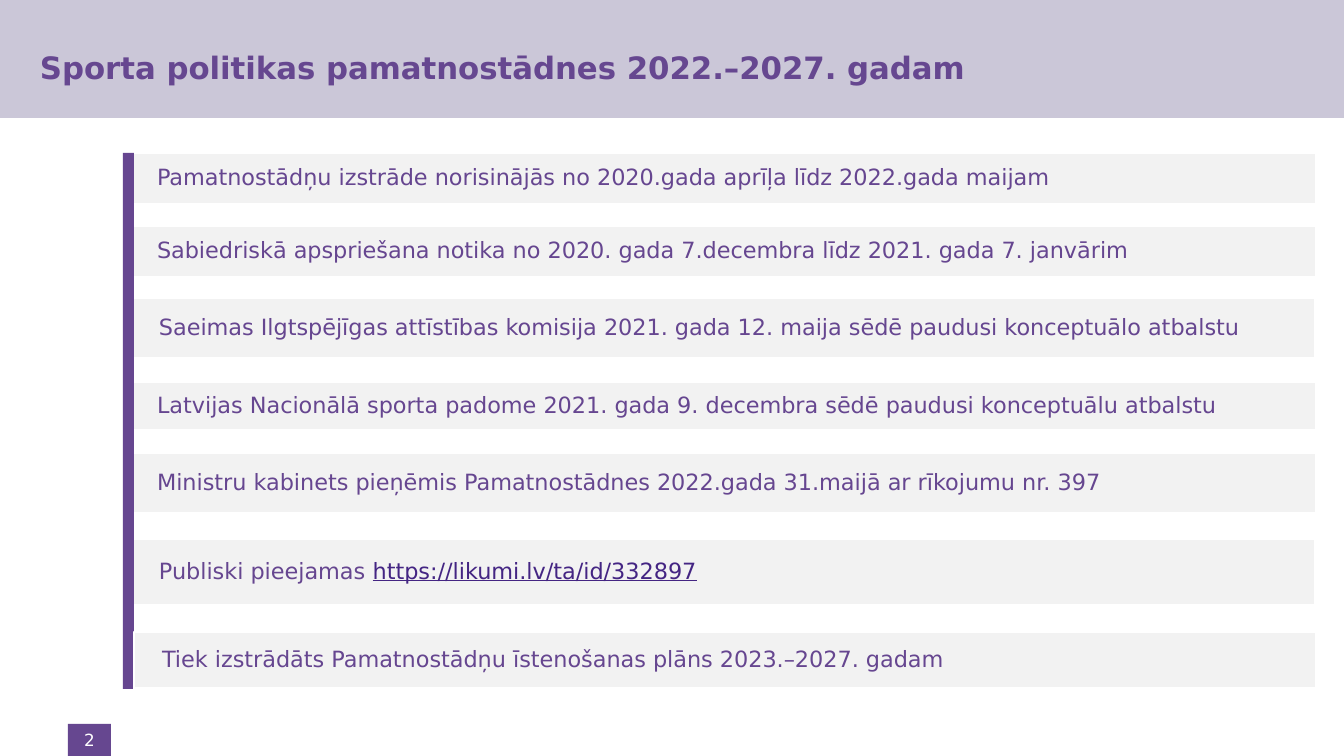
from pptx import Presentation
from pptx.dml.color import RGBColor
from pptx.enum.shapes import MSO_SHAPE
from pptx.enum.text import MSO_ANCHOR, PP_ALIGN
from pptx.util import Pt

# Content
TITLE = "Sporta politikas pamatnostādnes 2022.–2027. gadam"
PAGE = "2"
ADDRESS = "https://likumi.lv/ta/id/332897"
# left, top, height in px, then the text runs
MILESTONES = [
    (129, 153, 51, ["Pamatnostādņu izstrāde norisinājās no 2020.gada aprīļa līdz 2022.gada maijam"]),
    (129, 226, 51, ["Sabiedriskā apspriešana notika no 2020. gada 7.decembra līdz 2021. gada 7. janvārim"]),
    (131, 298, 60, ["Saeimas Ilgtspējīgas attīstības komisija 2021. gada 12. maija sēdē paudusi konceptuālo atbalstu"]),
    (129, 382, 48, ["Latvijas Nacionālā sporta padome 2021. gada 9. decembra sēdē paudusi konceptuālu atbalstu"]),
    (129, 453, 60, ["Ministru kabinets pieņēmis Pamatnostādnes 2022.gada 31.maijā ar rīkojumu nr. 397"]),
    (131, 539, 66, ["Publiski pieejamas ", ADDRESS]),
    (134, 632, 57, ["Tiek izstrādāts Pamatnostādņu īstenošanas plāns 2023.–2027. gadam"]),
]

FONT = "DejaVu Sans"
WIDTH, HEIGHT = 1344, 756
BARS_RIGHT = 1316
EMU_PER_PX = 12192000 / WIDTH
PURPLE, TEXT_PURPLE, LINK = "664790", "664690", "442583"
LILAC, GREY, WHITE = "CBC7D8", "F2F2F2", "FFFFFF"


def px(length):
    return round(length * EMU_PER_PX)


def color(hex_string):
    return RGBColor.from_string(hex_string)


def add_rect(left, top, width, height, fill, line=None):
    rect = slide.shapes.add_shape(
        MSO_SHAPE.RECTANGLE, px(left), px(top), px(width), px(height))
    rect.shadow.inherit = False
    rect.fill.solid()
    rect.fill.fore_color.rgb = color(fill)
    if line:
        rect.line.color.rgb = color(line)
        rect.line.width = Pt(2)
    else:
        rect.line.fill.background()
    return rect


def set_text(shape, runs, size, hue, insets, align=PP_ALIGN.LEFT, bold=False):
    frame = shape.text_frame
    frame.word_wrap = True
    frame.vertical_anchor = MSO_ANCHOR.MIDDLE
    (frame.margin_left, frame.margin_top,
     frame.margin_right, frame.margin_bottom) = map(px, insets)
    paragraph = frame.paragraphs[0]
    paragraph.alignment = align
    for words in runs:
        run = paragraph.add_run()
        run.text = words
        run.font.name = FONT
        run.font.size = Pt(size)
        run.font.bold = bold
        run.font.underline = words == ADDRESS
        run.font.color.rgb = color(LINK if words == ADDRESS else hue)
    return paragraph


presentation = Presentation()
presentation.slide_width, presentation.slide_height = px(WIDTH), px(HEIGHT)
slide = presentation.slides.add_slide(presentation.slide_layouts[6])

# Header band and title
add_rect(0, 0, WIDTH, 118, LILAC)
title = slide.shapes.add_textbox(px(40), px(4), px(1225), px(126))
set_text(title, [TITLE], 22, PURPLE, (0, 5, 10, 5), bold=True)

# Page number
badge = add_rect(68, 724, 43, 32, PURPLE)
set_text(badge, [PAGE], 12, WHITE, (4, 4, 4, 4), PP_ALIGN.CENTER)

# Milestone bars, with the rail beneath the last one only
for milestone in MILESTONES:
    left, top, height, runs = milestone
    if milestone is MILESTONES[-1]:
        add_rect(123, 153, 11, 536, TEXT_PURPLE)
    bar = add_rect(left, top, BARS_RIGHT - left, height, GREY, WHITE)
    paragraph = set_text(bar, runs, 16, TEXT_PURPLE, (28, 5, 9, 5))
    paragraph.line_spacing = 0.9
    paragraph.space_after = Pt(5.6)

presentation.save("out.pptx")
